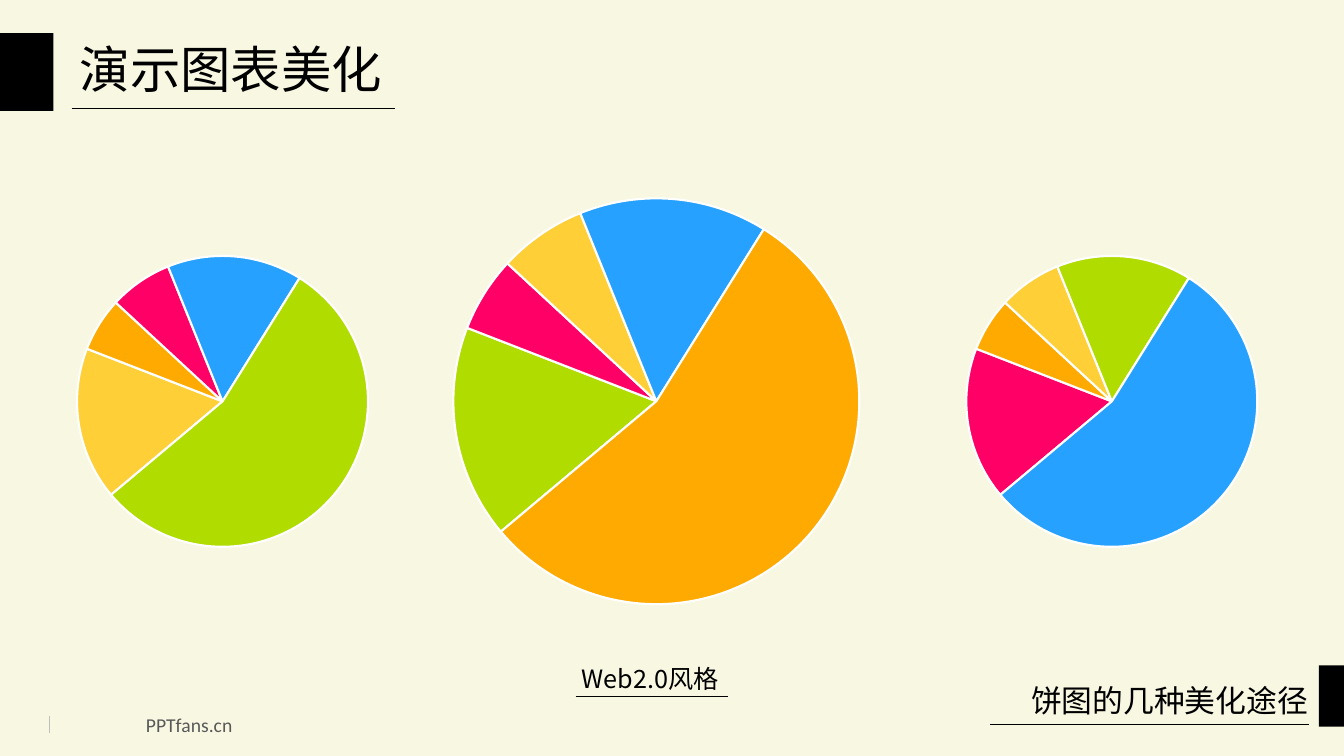
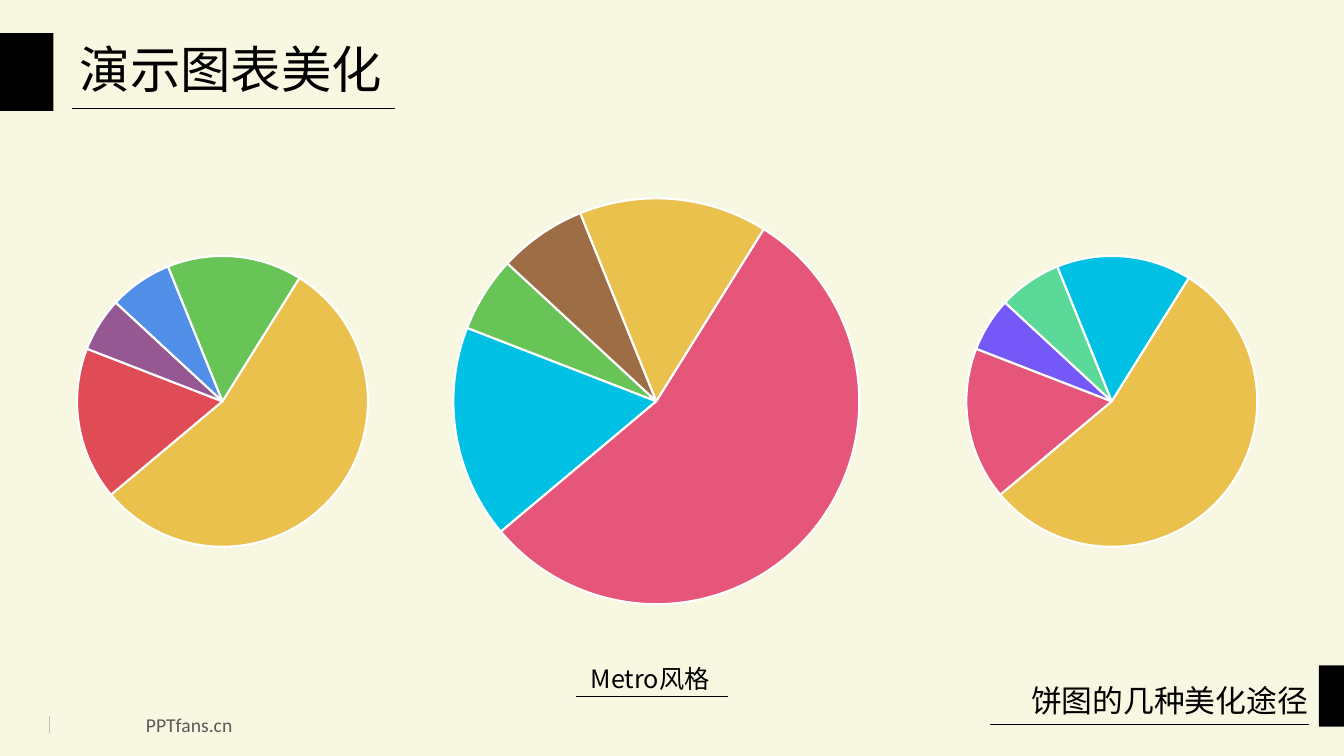
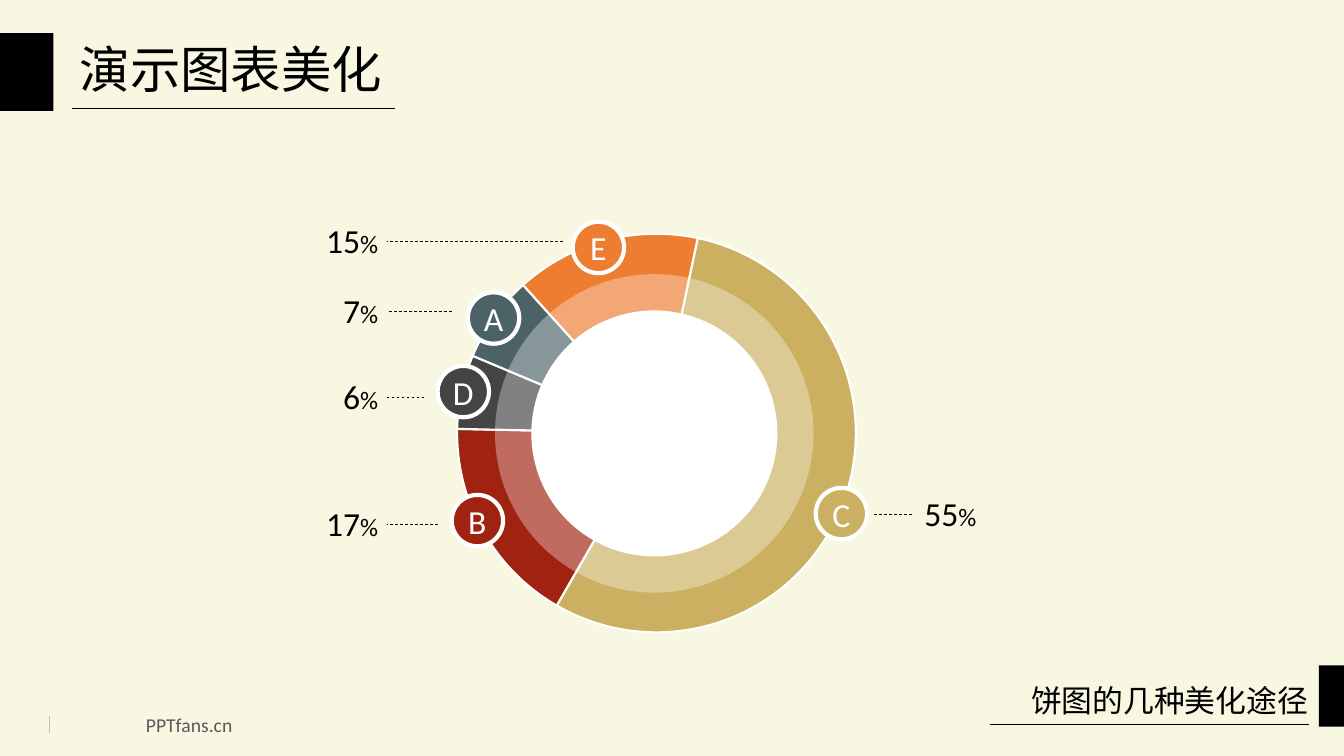
from lxml import etree
from pptx import Presentation
from pptx.chart import data
from pptx.dml import color
from pptx.enum import chart as kinds
from pptx.enum import dml, shapes, text
from pptx.oxml import ns
from pptx.util import Inches, Pt

RGB = color.RGBColor
CREAM = RGB(0xF8, 0xF7, 0xE2)
BLACK = RGB(0x00, 0x00, 0x00)
WHITE = RGB(0xFF, 0xFF, 0xFF)
GREY = RGB(0x59, 0x59, 0x59)
SILVER = RGB(0xBF, 0xBF, 0xBF)

LIME = RGB(0xB0, 0xDC, 0x00)
PINK = RGB(0xFF, 0x00, 0x66)
YELLOW = RGB(0xFF, 0xCF, 0x37)
SKY = RGB(0x27, 0xA1, 0xFF)
AMBER = RGB(0xFF, 0xAA, 0x00)

CYAN = RGB(0x00, 0xC0, 0xE4)
GREEN = RGB(0x68, 0xC4, 0x57)
BROWN = RGB(0x9D, 0x6D, 0x45)
GOLD = RGB(0xEA, 0xC1, 0x4D)
ROSE = RGB(0xE5, 0x56, 0x7A)
RED = RGB(0xDF, 0x4C, 0x56)
PLUM = RGB(0x95, 0x58, 0x93)
BLUE = RGB(0x50, 0x8E, 0xE8)
VIOLET = RGB(0x75, 0x58, 0xF8)
MINT = RGB(0x5B, 0xD9, 0x99)

RUST = RGB(0xA0, 0x23, 0x11)
COAL = RGB(0x44, 0x44, 0x44)
SLATE = RGB(0x4B, 0x63, 0x67)
ORANGE = RGB(0xED, 0x7D, 0x31)
SAND = RGB(0xCB, 0xB0, 0x62)

LATIN = "Calibri"
HAN = "Noto Sans CJK SC"
LEFT = text.PP_ALIGN.LEFT
RIGHT = text.PP_ALIGN.RIGHT
CENTER = text.PP_ALIGN.CENTER
RECT = shapes.MSO_SHAPE.RECTANGLE
OVAL = shapes.MSO_SHAPE.OVAL
SHARES = (17, 6, 7, 15, 55)
PLOT = {"x": 0.122, "y": 0.112, "w": 0.727, "h": 0.754}

STYLES = [
    ("Web2.0风格", (LIME, PINK, YELLOW, SKY, AMBER),
     (YELLOW, AMBER, PINK, SKY, LIME), (PINK, AMBER, YELLOW, LIME, SKY)),
    ("Metro风格", (CYAN, GREEN, BROWN, GOLD, ROSE),
     (RED, PLUM, BLUE, GREEN, GOLD), (ROSE, VIOLET, MINT, CYAN, GOLD)),
]
PARTS = [
    ("B", RUST, 4.48, 4.91, 4.34, 5.2),
    ("D", COAL, 4.34, 3.63, 4.21, 3.94),
    ("A", SLATE, 4.64, 2.9, 4.48, 3.09),
    ("E", ORANGE, 5.68, 2.2, 5.58, 2.39),
    ("C", SAND, 8.09, 4.84, 8.67, 5.1),
]


def write(frame, words, unit="", size=18, font=LATIN, tint=BLACK, align=LEFT,
          anchor=text.MSO_ANCHOR.TOP, wrap=True):
    frame.word_wrap = wrap
    frame.vertical_anchor = anchor
    line = frame.paragraphs[0]
    line.alignment = align
    for part, points in ((words, size), (unit, 18)):
        if part:
            run = line.add_run()
            run.text = part
            run.font.size = Pt(points)
            run.font.name = font
            run.font.color.rgb = tint
            east = etree.SubElement(run.font._element, ns.qn("a:ea"))
            east.set("typeface", font)


class Deck:
    def __init__(self):
        self.show = Presentation()
        self.show.slide_width = Inches(13.33)
        self.show.slide_height = Inches(7.5)
        back = self.show.slide_master.background.fill
        back.solid()
        back.fore_color.rgb = CREAM

    def page(self):
        self.slide = self.show.slides.add_slide(self.show.slide_layouts[5])
        title = self.slide.shapes.title
        title.left, title.top = Inches(0.69), Inches(0.33)
        title.width, title.height = Inches(5.35), Inches(0.71)
        write(title.text_frame, "演示图表美化", size=36, font=HAN)
        title.text_frame.auto_size = text.MSO_AUTO_SIZE.NONE
        self.rule(0.71, 1.08, 3.92, 1.08)
        self.shape(RECT, 0, 0.33, 0.53, 0.77, BLACK)
        self.shape(RECT, 13.08, 6.6, 0.25, 0.61, BLACK)
        self.rule(9.82, 7.19, 12.98, 7.19)
        self.rule(0.49, 7.27, 0.49, 7.1, tint=SILVER, weight=0.75)
        self.label("PPTfans.cn", 1.35, 7.02, 1.07, 0.34, size=14, tint=GREY,
                   wrap=False)
        self.label("饼图的几种美化途径", 9.7, 6.71, 3.37, 0.47, size=22,
                   font=HAN, align=RIGHT)

    def label(self, words, x, y, w, h, **form):
        box = self.slide.shapes.add_textbox(
            Inches(x), Inches(y), Inches(w), Inches(h))
        write(box.text_frame, words, **form)

    def shape(self, kind, x, y, w, h, fill, edge=0, alpha=None):
        item = self.slide.shapes.add_shape(
            kind, Inches(x), Inches(y), Inches(w), Inches(h))
        item.shadow.inherit = False
        item.fill.solid()
        item.fill.fore_color.rgb = fill
        if edge:
            item.line.color.rgb = WHITE
            item.line.width = Pt(edge)
        else:
            item.line.fill.background()
        if alpha:
            tone = item._element.spPr.find(".//" + ns.qn("a:srgbClr"))
            etree.SubElement(tone, ns.qn("a:alpha")).set("val", str(alpha * 1000))
        return item

    def badge(self, mark, x, y, fill):
        frame = self.shape(OVAL, x, y, 0.51, 0.51, fill, edge=3).text_frame
        frame.margin_left = frame.margin_right = 0
        frame.margin_top = frame.margin_bottom = 0
        write(frame, mark, size=24, tint=WHITE, align=CENTER,
              anchor=text.MSO_ANCHOR.MIDDLE)

    def rule(self, x1, y1, x2, y2, tint=BLACK, weight=0.5, dash=False):
        item = self.slide.shapes.add_connector(
            shapes.MSO_CONNECTOR.STRAIGHT,
            Inches(x1), Inches(y1), Inches(x2), Inches(y2))
        item.line.color.rgb = tint
        item.line.width = Pt(weight)
        if dash:
            item.line.dash_style = dml.MSO_LINE.DASH
        etree.SubElement(item._element.spPr, ns.qn("a:effectLst"))

    def pie(self, x, y, w, h, tints, start=230):
        source = data.CategoryChartData()
        source.categories = ["1", "2", "3", "4", "5"]
        source.add_series("Series 1", SHARES)
        chart = self.slide.shapes.add_chart(
            kinds.XL_CHART_TYPE.PIE, Inches(x), Inches(y), Inches(w),
            Inches(h), source).chart
        chart.has_title = False
        chart.has_legend = False
        chart.font.size = Pt(18)
        chart.font.name = LATIN
        chart.font.color.rgb = BLACK
        plot = chart.plots[0]
        plot.vary_by_categories = True
        for spot, tint in enumerate(tints):
            form = plot.series[0].points[spot].format
            form.fill.solid()
            form.fill.fore_color.rgb = tint
            form.line.color.rgb = WHITE
            form.line.width = Pt(1.5)
        root = plot._element
        for old in root.findall(ns.qn("c:firstSliceAng")):
            root.remove(old)
        etree.SubElement(root, ns.qn("c:firstSliceAng")).set("val", str(start))
        area = root.getparent()
        for old in area.findall(ns.qn("c:layout")):
            area.remove(old)
        layout = etree.Element(ns.qn("c:layout"))
        area.insert(0, layout)
        manual = etree.SubElement(layout, ns.qn("c:manualLayout"))
        modes = {"layoutTarget": "inner", "xMode": "edge", "yMode": "edge"}
        for tag, value in {**modes, **PLOT}.items():
            etree.SubElement(manual, ns.qn("c:" + tag)).set("val", str(value))

    def trio(self, name, main, left, right):
        self.page()
        self.pie(3.82, 1.37, 5.54, 5.34, main)
        self.label(name, 5.48, 6.53, 1.94, 0.4, font=HAN, align=CENTER)
        self.rule(5.71, 6.91, 7.22, 6.91)
        for x, tints in ((0.28, left), (9.1, right)):
            self.pie(x, 2.11, 3.97, 3.83, tints)

    def ring(self):
        self.page()
        self.pie(3.87, 1.73, 5.44, 5.25, [part[1] for part in PARTS], start=210)
        for share, (mark, tint, x, y, end, level) in zip(SHARES, PARTS):
            self.badge(mark, x, y, tint)
            east = end > 6.5
            self.rule(end, level, 9.06 if east else 3.84, level, dash=True)
            self.label(str(share), 9.07 if east else 3.08, level - 0.26,
                       0.77, 0.5, unit="%", size=24,
                       align=LEFT if east else RIGHT)
        for side, alpha in ((2.44, None), (3.16, 33)):
            self.shape(OVAL, 6.49 - side / 2, 4.3 - side / 2, side, side,
                       WHITE, alpha=alpha)


def main():
    deck = Deck()
    for style in STYLES:
        deck.trio(*style)
    deck.ring()
    deck.show.save("out.pptx")


if __name__ == "__main__":
    main()
